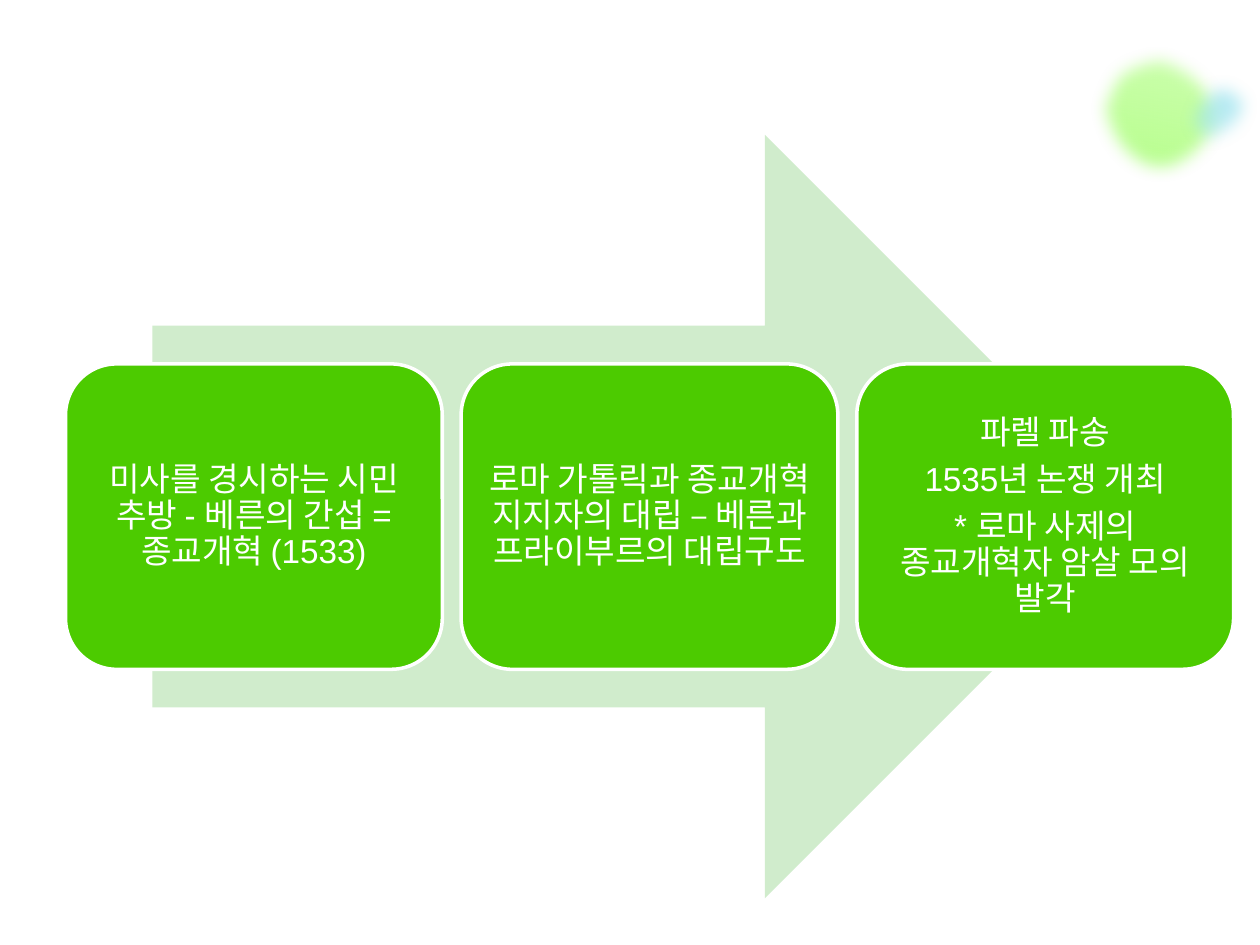
from dataclasses import dataclass

import pptx
import pptx.dml.color
import pptx.enum.dml
import pptx.enum.shapes
import pptx.enum.text
import pptx.oxml
import pptx.oxml.ns
import pptx.util
from lxml import etree

Inches = pptx.util.Inches
Pt = pptx.util.Pt
MSO_SHAPE = pptx.enum.shapes.MSO_SHAPE


@dataclass(frozen=True)
class Theme:
    arrow: str = "D0ECCC"
    card: str = "4CCB00"
    white: str = "FFFFFF"
    green_blob: tuple = ("B2FF84", "B2FF84", 58)
    blue_blob: tuple = ("8CDFEC", "B0E9F2", 36)
    font: str = "Arial"
    size: float = 19
    after: float = 6.5
    soft_edge: float = 0.14


THEME = Theme()

GREEN_CURVES = [
    (9.74, 1.03),
    (9.71, 1.18, 9.74, 1.26, 9.49, 1.39),
    (9.36, 1.47, 9.21, 1.5, 9.06, 1.46),
    (8.91, 1.43, 8.78, 1.34, 8.7, 1.21),
    (8.65, 1.04, 8.59, 0.93, 8.63, 0.78),
    (8.66, 0.63, 8.75, 0.5, 8.88, 0.42),
    (9.06, 0.37, 9.18, 0.32, 9.31, 0.34),
    (9.43, 0.37, 9.55, 0.45, 9.63, 0.58),
    (9.71, 0.71, 9.78, 0.88, 9.74, 1.03),
]
BLUE_CURVES = [
    (9.97, 1.05),
    (10.03, 0.96, 10, 0.89, 9.99, 0.82),
    (9.98, 0.75, 9.97, 0.65, 9.91, 0.6),
    (9.85, 0.56, 9.71, 0.54, 9.62, 0.56),
    (9.54, 0.58, 9.45, 0.63, 9.39, 0.72),
    (9.32, 0.81, 9.32, 0.92, 9.34, 1.01),
    (9.35, 1.09, 9.4, 1.19, 9.46, 1.24),
    (9.53, 1.29, 9.64, 1.31, 9.71, 1.31),
    (9.78, 1.3, 9.81, 1.29, 9.87, 1.2),
]

STEPS = [
    ["미사를 경시하는 시민 추방 - 베른의 간섭 = 종교개혁 (1533)"],
    ["로마 가톨릭과 종교개혁 지지자의 대립 – 베른과 프라이부르의 대립구도"],
    ["파렐 파송", "1535년 논쟁 개최", "* 로마 사제의 종교개혁자 암살 모의 발각"],
]


def rgb(value):
    return pptx.dml.color.RGBColor.from_string(value)


def curve_points(curves, steps=8):
    points = [curves[0]]
    for x1, y1, x2, y2, x3, y3 in curves[1:]:
        x0, y0 = points[-1]
        for i in range(1, steps + 1):
            t = i / steps
            u = 1 - t
            weights = (u**3, 3 * u * u * t, 3 * u * t * t, t**3)
            points.append((
                sum(w * x for w, x in zip(weights, (x0, x1, x2, x3))),
                sum(w * y for w, y in zip(weights, (y0, y1, y2, y3))),
            ))
    return points


def add_blob(slide, box, curves, rotation, colors):
    points = curve_points(curves)
    builder = slide.shapes.build_freeform(*points[0], scale=Inches(1))
    builder = slide.shapes.build_freeform(
        *(Inches(v) for v in points[0]), scale=1.0)
    builder.add_line_segments([(Inches(x), Inches(y)) for x, y in points[1:]])
    sp = builder.convert_to_shape()
    sp.left, sp.top, sp.width, sp.height = (Inches(v) for v in box)
    sp.rotation = rotation
    sp.line.fill.background()
    sp.shadow.inherit = False
    start, end, opacity = colors
    sp.fill.gradient()
    sp.fill.gradient_angle = 270
    for stop, color in zip(sp.fill.gradient_stops, (start, end)):
        stop.color.rgb = rgb(color)
    qn = pptx.oxml.ns.qn
    props = sp._element.spPr
    last = props.findall(".//" + qn("a:srgbClr"))[-1]
    etree.SubElement(last, qn("a:alpha"), val=str(opacity * 1000))
    etree.SubElement(props.find(qn("a:effectLst")), qn("a:softEdge"),
                     rad=str(int(Inches(THEME.soft_edge))))


def add_solid(slide, kind, box, color):
    sp = slide.shapes.add_shape(kind, *(Inches(v) for v in box))
    sp.shadow.inherit = False
    sp.fill.solid()
    sp.fill.fore_color.rgb = rgb(color)
    sp.line.fill.background()
    return sp


def add_card(slide, box, lines):
    sp = add_solid(slide, MSO_SHAPE.ROUNDED_RECTANGLE, box, THEME.card)
    sp.adjustments[0] = 0.167
    sp.line.color.rgb = rgb(THEME.white)
    sp.line.width = Pt(2)
    tf = sp.text_frame
    tf.word_wrap = True
    tf.vertical_anchor = pptx.enum.text.MSO_ANCHOR.MIDDLE
    tf.margin_left = tf.margin_right = Inches(0.08)
    tf.margin_top = tf.margin_bottom = Inches(0.08)
    for i, line in enumerate(lines):
        p = tf.add_paragraph() if i else tf.paragraphs[0]
        p.alignment = pptx.enum.text.PP_ALIGN.CENTER
        p.line_spacing = 0.9
        p.space_after = Pt(THEME.after)
        r = p.add_run()
        r.text = line
        r.font.name = THEME.font
        r.font.size = Pt(THEME.size)
        r.font.color.rgb = rgb(THEME.white)


def add_process(slide, box, steps):
    left, top, width, height = box
    inset = 0.69
    add_solid(slide, MSO_SHAPE.RIGHT_ARROW,
              (left + inset, top, width - 2 * inset, height), THEME.arrow)
    gap = 0.15
    card_width = (width - gap * (len(steps) - 1)) / len(steps)
    card_height = height * 0.4
    card_top = top + (height - card_height) / 2
    for i, lines in enumerate(steps):
        card_left = left + i * (card_width + gap)
        add_card(slide, (card_left, card_top, card_width, card_height), lines)


def main():
    prs = pptx.Presentation()
    prs.slide_width = Inches(10)
    prs.slide_height = Inches(7.5)
    slide = prs.slides.add_slide(prs.slide_layouts[6])
    add_blob(slide, (8.61, 0.33, 1.19, 1.15), GREEN_CURVES, 192.5, THEME.green_blob)
    add_blob(slide, (9.33, 0.52, 0.67, 0.78), BLUE_CURVES, 34.8, THEME.blue_blob)
    add_process(slide, (0.52, 1.07, 9.27, 6.06), STEPS)
    prs.save("out.pptx")


if __name__ == "__main__":
    main()
